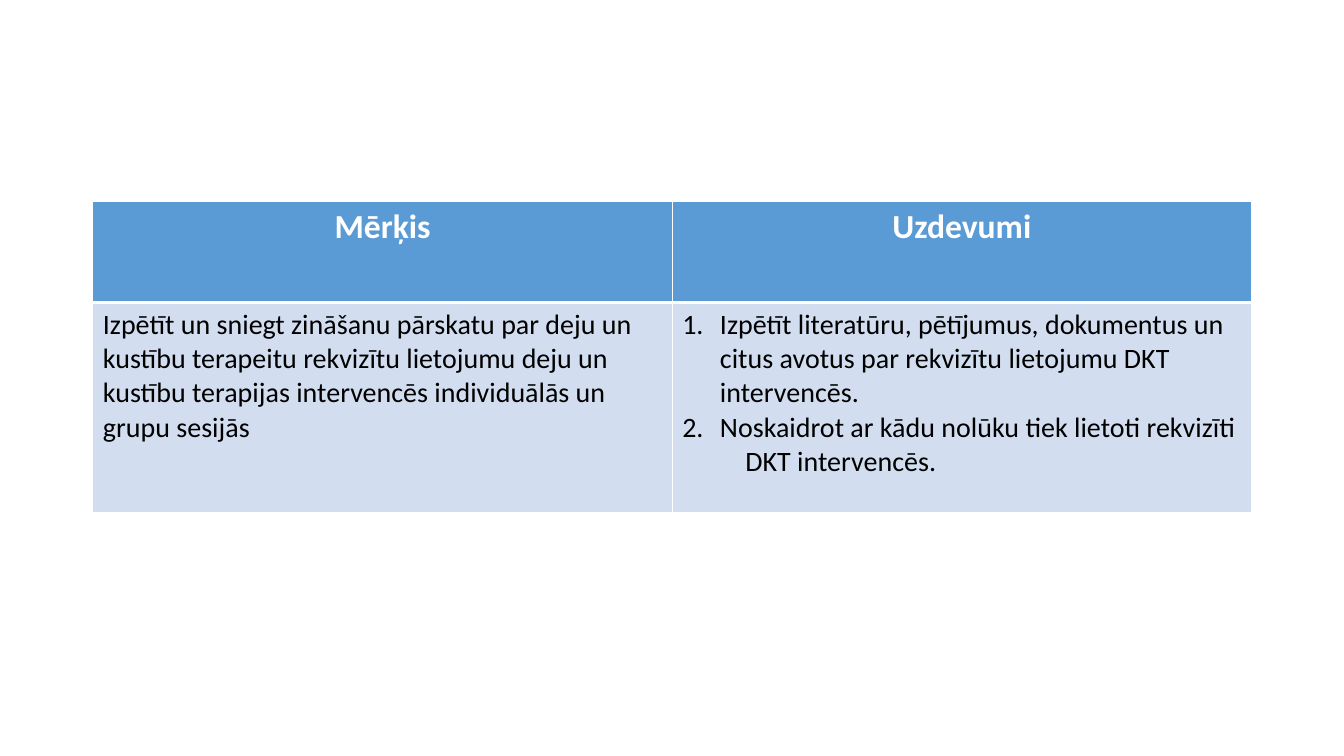
from lxml.etree import SubElement
from pptx import Presentation
from pptx.dml.color import RGBColor
from pptx.enum.text import PP_ALIGN
from pptx.oxml.ns import qn
from pptx.util import Cm, Pt


def color(code):
    return RGBColor.from_string(code)


def write(para, text, size=20, ink="000000", bold=False, align=PP_ALIGN.LEFT,
          left=0, numbered=False):
    para.alignment = align
    span = para.add_run()
    span.text = text
    span.font.name = "Calibri"
    span.font.size = Pt(size)
    span.font.bold = bold
    span.font.color.rgb = color(ink)
    props = para._p.get_or_add_pPr()
    props.set("marL", str(Cm(left)))
    props.set("indent", str(-Cm(left) if numbered else 0))
    if numbered:
        SubElement(props, qn("a:buFont"), typeface="+mj-lt")
        SubElement(props, qn("a:buAutoNum"), type="arabicPeriod")


deck = Presentation()
deck.slide_width, deck.slide_height = Cm(33.87), Cm(19.05)
page = deck.slides.add_slide(deck.slide_layouts[6])

# Table grid
table = page.shapes.add_table(2, 2, Cm(2.34), Cm(5.08), Cm(29.2), Cm(7.85)).table
for column in table.columns:
    column.width = Cm(14.6)
for row, height in zip(table.rows, (2.54, 5.31)):
    row.height = Cm(height)

# White borders, thick under the header, and cell fills
looks = [
    ("5B9BD5", {"L": 1, "R": 1, "T": 1, "B": 3}),
    ("D2DEEF", {"L": 1, "R": 1, "T": 3, "B": 1}),
]
for row, (fill, borders) in zip(table.rows, looks):
    for cell in row.cells:
        props = cell._tc.get_or_add_tcPr()
        for side, width in borders.items():
            line = SubElement(props, qn(f"a:ln{side}"), w=str(Pt(width)))
            solid = SubElement(line, qn("a:solidFill"))
            SubElement(solid, qn("a:srgbClr"), val="FFFFFF")
        cell.fill.solid()
        cell.fill.fore_color.rgb = color(fill)

# Header row
for cell, heading in zip(table.rows[0].cells, ("Mērķis", "Uzdevumi")):
    write(cell.text_frame.paragraphs[0], heading, size=24, ink="FFFFFF",
          bold=True, align=PP_ALIGN.CENTER)

# Goal
goal, tasks = (cell.text_frame for cell in table.rows[1].cells)
write(goal.paragraphs[0],
      "Izpētīt un sniegt zināšanu pārskatu par deju un kustību terapeitu "
      "rekvizītu lietojumu deju un kustību terapijas intervencēs "
      "individuālās un grupu sesijās")

# Tasks, the last line set in further than the numbered ones
write(tasks.paragraphs[0],
      "Izpētīt literatūru, pētījumus, dokumentus un citus avotus par "
      "rekvizītu lietojumu DKT intervencēs.", left=0.95, numbered=True)
write(tasks.add_paragraph(), "Noskaidrot ar kādu nolūku tiek lietoti rekvizīti",
      left=0.95, numbered=True)
write(tasks.add_paragraph(), "DKT intervencēs.", left=1.59)

deck.save("out.pptx")
